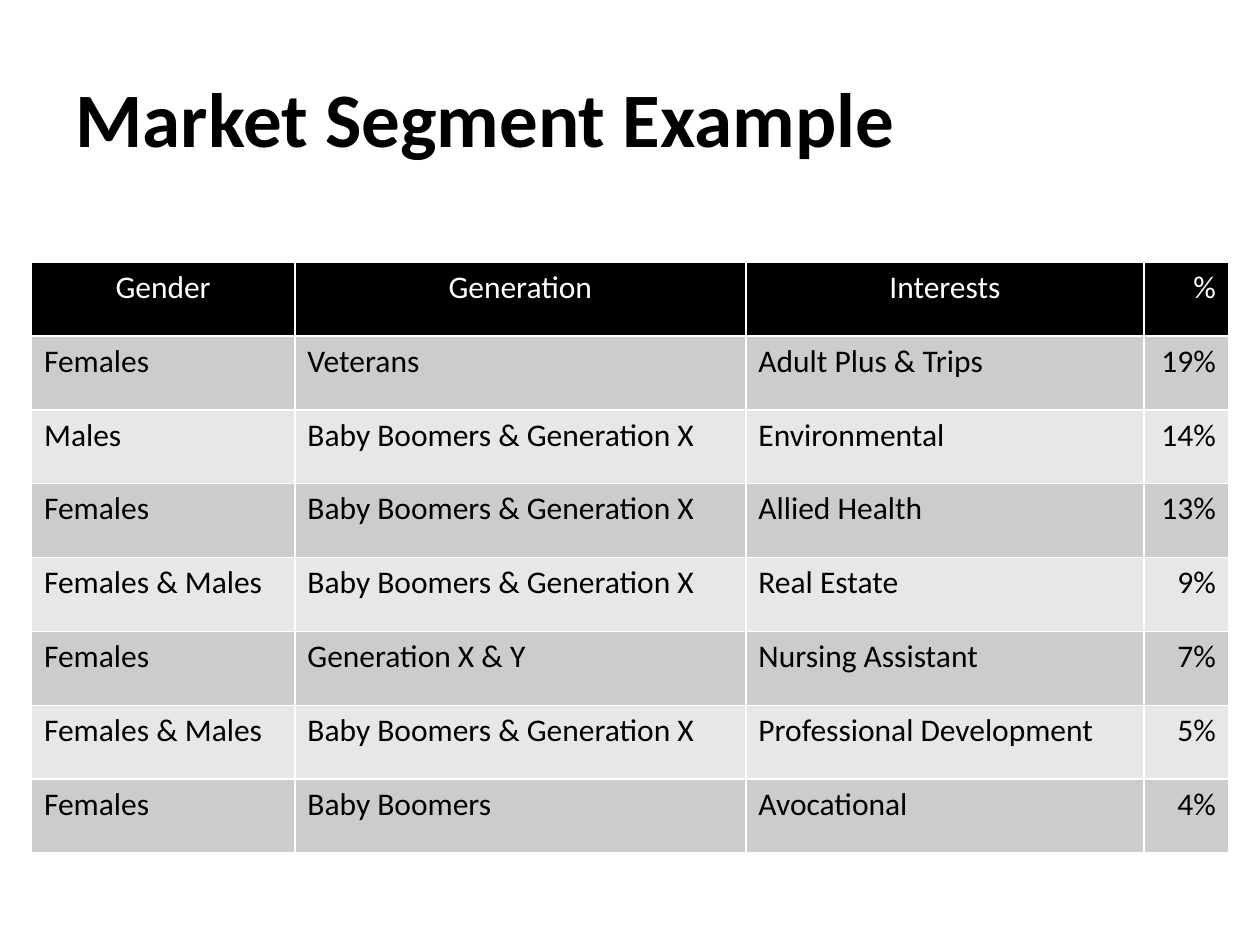
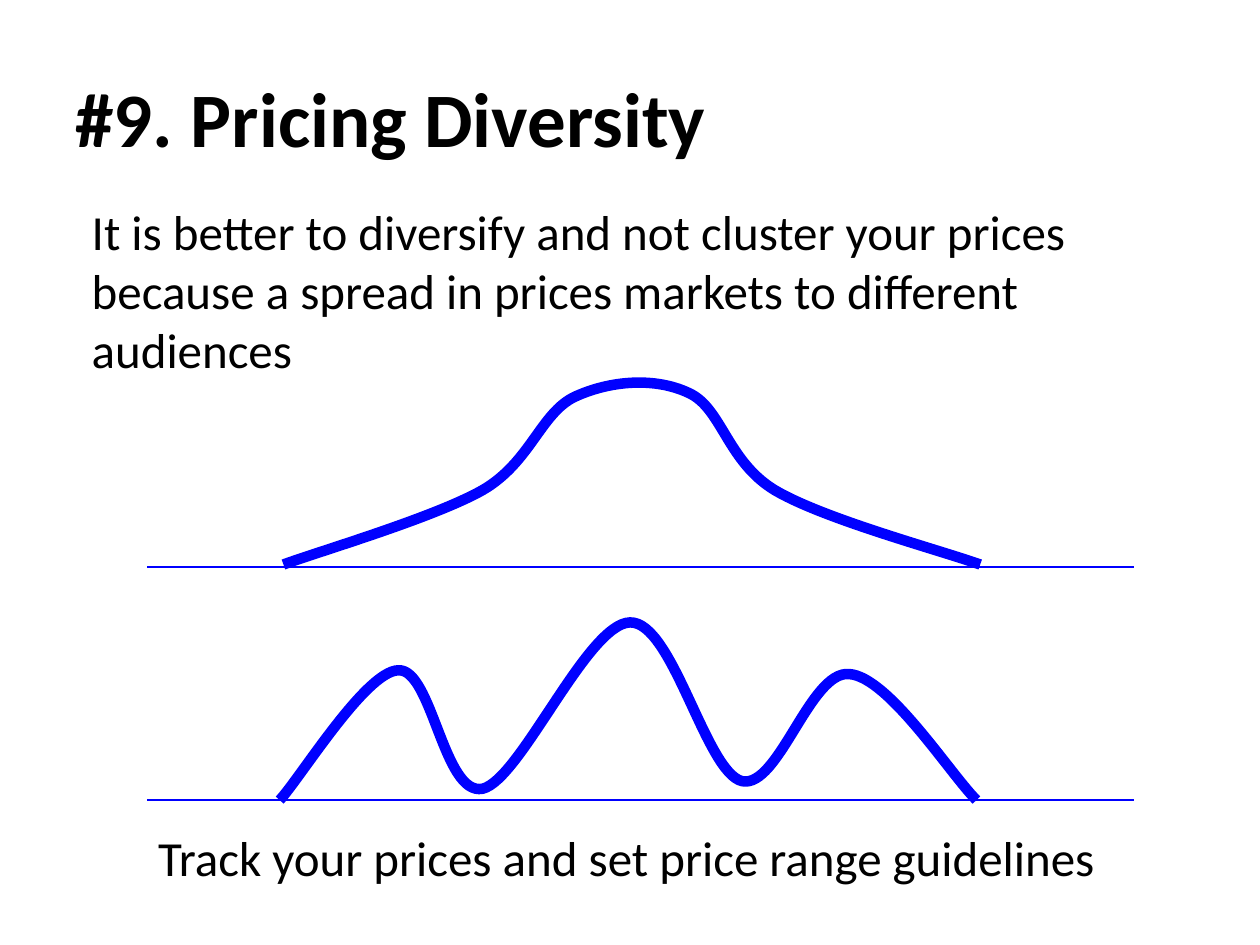
from lxml import etree
from pptx import Presentation
from pptx.dml.color import RGBColor
from pptx.enum.shapes import MSO_CONNECTOR
from pptx.enum.text import MSO_ANCHOR, PP_ALIGN
from pptx.oxml.ns import qn
from pptx.util import Inches, Pt

LEFT, CENTER, RIGHT = PP_ALIGN.LEFT, PP_ALIGN.CENTER, PP_ALIGN.RIGHT
MIDDLE, STRAIGHT = MSO_ANCHOR.MIDDLE, MSO_CONNECTOR.STRAIGHT

BLACK = RGBColor(0x00, 0x00, 0x00)
WHITE = RGBColor(0xFF, 0xFF, 0xFF)
DARK_BAND = RGBColor(0xCC, 0xCC, 0xCC)
LIGHT_BAND = RGBColor(0xE7, 0xE7, 0xE7)
BLUE = RGBColor(0x00, 0x00, 0xFF)

FONT = "Calibri"
TITLE_ONLY = 5

# The page is a grid of 20 columns and 15 rows; boxes are (left, top, width, height)
COLUMNS, ROWS = 20, 15
CELL = Inches(0.5)
TITLE_BOX = (1, 0.6, 18, 2.5)
TABLE_BOX = (0.5, 4.16, 19, 9.38)
INTRO_BOX = (0.66, 3.1, 18.66, 3.4)
CLUSTERED_BOX = (2.34, 5.98, 15.66, 3.02)
SPREAD_BOX = (2.34, 9.86, 15.66, 2.84)
CLOSING_BOX = (1, 13.04, 17.88, 1.52)

SEGMENT_COLUMNS = (4.18, 7.16, 6.32, 1.34)
SEGMENTS = (
    ("Gender", "Generation", "Interests", "%"),
    ("Females", "Veterans", "Adult Plus & Trips", "19%"),
    ("Males", "Baby Boomers & Generation X", "Environmental", "14%"),
    ("Females", "Baby Boomers & Generation X", "Allied Health", "13%"),
    ("Females & Males", "Baby Boomers & Generation X", "Real Estate", "9%"),
    ("Females", "Generation X & Y", "Nursing Assistant", "7%"),
    ("Females & Males", "Baby Boomers & Generation X", "Professional Development", "5%"),
    ("Females", "Baby Boomers", "Avocational", "4%"),
)

# Start point, then two control points and an end point per curve, in grid cells
CLUSTERED_PRICES = (
    (2.16, 2.98),
    (2.7, 2.78), (4.54, 2.24), (5.32, 1.8),
    (6.08, 1.36), (6.24, 0.58), (6.78, 0.32),
    (7.34, 0.06), (8.06, 0), (8.6, 0.26),
    (9.12, 0.5), (9.2, 1.34), (9.96, 1.8),
    (10.74, 2.26), (12.54, 2.74), (13.22, 2.98),
)
SPREAD_PRICES = (
    (2.1, 2.84),
    (2.42, 2.5), (3.46, 0.8), (3.98, 0.78),
    (4.52, 0.74), (4.7, 2.78), (5.32, 2.66),
    (5.92, 2.52), (6.98, 0.04), (7.66, 0.02),
    (8.34, 0), (8.86, 2.4), (9.44, 2.54),
    (10.02, 2.66), (10.52, 0.78), (11.14, 0.84),
    (11.76, 0.88), (12.74, 2.42), (13.16, 2.84),
)


def cells(*lengths):
    """Turn grid lengths into slide units."""
    return [int(length * CELL) for length in lengths]


def write(frame, text, size=28, color=BLACK, bold=False, align=LEFT,
          before=0, indent=0):
    frame.word_wrap = True
    para = frame.paragraphs[0]
    para.alignment = align
    para.space_before = Pt(before)
    if indent:
        para._p.get_or_add_pPr().set("marL", str(Inches(indent)))
    span = para.add_run()
    span.text = text
    span.font.name = FONT
    span.font.size = Pt(size)
    span.font.bold = bold
    span.font.color.rgb = color


def add_page(deck, title):
    page = deck.slides.add_slide(deck.slide_layouts[TITLE_ONLY])
    holder = page.shapes.title
    holder.left, holder.top, holder.width, holder.height = cells(*TITLE_BOX)
    holder.text_frame.vertical_anchor = MIDDLE
    write(holder.text_frame, title, size=44, bold=True)
    return page


def add_text(page, box, text, **style):
    holder = page.shapes.add_textbox(*cells(*box))
    write(holder.text_frame, text, **style)


def border_cell(cell, color, width):
    properties = cell._tc.get_or_add_tcPr()
    for side in ("a:lnL", "a:lnR", "a:lnT", "a:lnB"):
        line = etree.SubElement(properties, qn(side), w=str(Pt(width)))
        fill = etree.SubElement(line, qn("a:solidFill"))
        etree.SubElement(fill, qn("a:srgbClr"), val=str(color))


def add_segment_table(page, box):
    table = page.shapes.add_table(
        len(SEGMENTS), len(SEGMENT_COLUMNS), *cells(*box)).table
    table.horz_banding = False
    for column, width in zip(table.columns, cells(*SEGMENT_COLUMNS)):
        column.width = width

    for row, values in enumerate(SEGMENTS):
        header = row == 0
        band = BLACK if header else DARK_BAND if row % 2 else LIGHT_BAND
        for column, value in enumerate(values):
            cell = table.cell(row, column)
            border_cell(cell, WHITE, 1)
            cell.fill.solid()
            cell.fill.fore_color.rgb = band
            last = column == len(values) - 1
            write(cell.text_frame, value, size=18,
                  color=WHITE if header else BLACK,
                  align=RIGHT if last else CENTER if header else LEFT)


def smooth_outline(shape):
    """Join each three line segments into one cubic curve."""
    segments = list(shape._element.iter(qn("a:lnTo")))
    for first in range(0, len(segments), 3):
        curve = etree.Element(qn("a:cubicBezTo"))
        segments[first].addprevious(curve)
        for segment in segments[first:first + 3]:
            curve.append(segment[0])
            segment.getparent().remove(segment)


def add_price_curve(page, box, points):
    left, top, width, height = cells(*box)

    # Distribution curve
    start, *rest = [(left + x, top + y) for x, y in (cells(*p) for p in points)]
    builder = page.shapes.build_freeform(*start)
    builder.add_line_segments(rest, close=False)
    curve = builder.convert_to_shape()
    smooth_outline(curve)
    curve.shadow.inherit = False
    curve.fill.background()
    curve.line.color.rgb = BLUE
    curve.line.width = Pt(6)

    # Baseline along the bottom of the box
    bottom = top + height
    baseline = page.shapes.add_connector(STRAIGHT, left, bottom, left + width, bottom)
    baseline.line.color.rgb = BLUE
    baseline.line.width = Pt(0.75)
    etree.SubElement(baseline._element.spPr, qn("a:effectLst"))


def build_segment_page(deck):
    page = add_page(deck, "Market Segment Example")
    add_segment_table(page, TABLE_BOX)


def build_pricing_page(deck):
    page = add_page(deck, "#9. Pricing Diversity")
    add_price_curve(page, CLUSTERED_BOX, CLUSTERED_PRICES)
    add_price_curve(page, SPREAD_BOX, SPREAD_PRICES)
    add_text(page, CLOSING_BOX, "Track your prices and set price range guidelines",
             align=CENTER, before=7)
    add_text(page, INTRO_BOX,
             "It is better to diversify and not cluster your prices because "
             "a spread in prices markets to different audiences",
             before=7, indent=0.3)


def main():
    deck = Presentation()
    deck.slide_width, deck.slide_height = cells(COLUMNS, ROWS)
    build_segment_page(deck)
    build_pricing_page(deck)
    deck.save("out.pptx")


if __name__ == "__main__":
    main()
